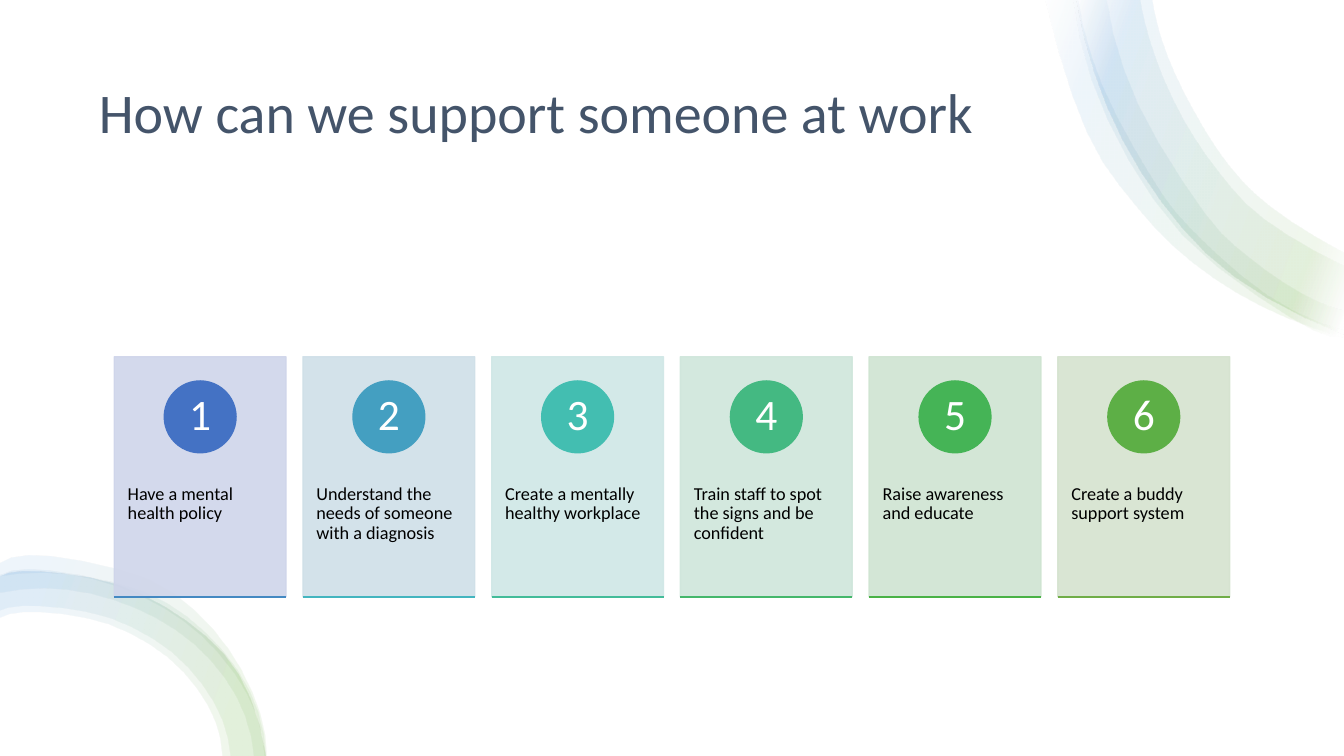
from lxml import etree
from pptx import Presentation
from pptx import util as u
from pptx.dml.color import RGBColor
from pptx.enum import shapes, text
from pptx.oxml import parse_xml
from pptx.oxml.ns import nsdecls, qn

COLORS = {
    "title": "44546A", "body": "000000", "number": "FFFFFF",
    "blue": "5B9BD5", "green": "70AD47", "white": "FFFFFF",
    "cards": ["CFD5EA", "CFDFE8", "CFE7E6", "CFE6DB", "CFE4D2", "D5E3CF"],
    "circles": ["4472C4", "449FC1", "43BEB1", "44B982", "45B456", "5DAF46"],
    "bars": ["4489C2", "43B5BF", "43BC99", "44B76B", "49B246", "70AD47"],
}
STEPS = [
    "Have a mental health policy",
    "Understand the needs of someone with a diagnosis",
    "Create a mentally healthy workplace",
    "Train staff to spot the signs and be confident",
    "Raise awareness and educate",
    "Create a buddy support system",
]

top_edge = [(27.13, 0), (27.91, 2.72), (29.26, 5.08), (31.08, 6.96), (33.87, 8.43)]
low_edge = [(0, 14.53), (1.02, 14.4), (2.96, 14.73), (4.7, 15.65), (6, 16.99), (6.68, 19.05)]
TOP_RIBBONS = [
    ([(26.34, 0), (27.38, 3.33), (28.65, 5.23), (30.02, 6.6), (31.78, 7.72), (33.87, 8.51)],
     [(33.87, 8.33), (31.93, 7.44), (30, 5.77), (28.96, 4.39), (27.76, 2.13), (27.17, 0)]),
    (top_edge,
     [(33.87, 6.38), (32.03, 5.23), (30.96, 4.17), (30.1, 2.84), (29.41, 1.4), (29.03, 0)]),
    ([(27.05, 0), (27.91, 3.02), (29.79, 5.92), (32.49, 7.98), (33.87, 8.46)],
     [(33.87, 7.82), (32.77, 7.37), (31.47, 6.48), (30.35, 5.36), (28.68, 2.64), (27.89, 0)]),
    (top_edge,
     [(33.87, 6.71), (31.83, 5.51), (30.73, 4.37), (29.82, 3.02), (29.13, 1.5), (28.73, 0)]),
]
LOW_RIBBONS = [
    (low_edge,
     [(5.59, 19.05), (5.23, 17.78), (4.22, 16.56), (2.72, 15.72), (1.02, 15.42), (0, 15.57)]),
    (low_edge,
     [(5.79, 19.05), (5.38, 17.7), (4.32, 16.43), (2.77, 15.57), (1.02, 15.27), (0, 15.39)]),
    ([(0, 14.5), (1.27, 14.38), (3.61, 14.91), (5.16, 15.93), (6.27, 17.4), (6.68, 19.05)],
     [(6.38, 19.05), (5.94, 17.55), (4.88, 16.23), (3.4, 15.32), (1.7, 14.86), (0, 14.94)]),
    ([(0, 14.2), (1.3, 14.02), (3.76, 14.61), (5.33, 15.82), (6.35, 17.45), (6.71, 19.05)],
     [(6.65, 19.05), (6.22, 17.5), (5.08, 16.03), (3.53, 15.01), (1.75, 14.48), (0, 14.53)]),
]
TOP_STOPS = [(2, "white"), (16, "green"), (85, "blue"), (100, "white")]
LOW_STOPS = [(16, "green"), (85, "blue")]


def smooth_curve(anchors, steps=3):
    before, after = [
        tuple(3 * p - 3 * q + r for p, q, r in zip(*ends))
        for ends in (anchors[:3], anchors[:-4:-1])]
    padded = [before, *anchors, after]
    curve = []
    for a, b, c, d in zip(padded, padded[1:], padded[2:], padded[3:]):
        for step in range(steps):
            t = step / steps
            curve.append(tuple(
                u.Cm(q + t * (r - p) / 2 + t * t * (2 * p - 5 * q + 4 * r - s) / 2
                     + t ** 3 * (3 * q - p - 3 * r + s) / 2)
                for p, q, r, s in zip(a, b, c, d)))
    return curve + [tuple(u.Cm(value) for value in anchors[-1])]


def write_text(shape, words, size, color, anchor, align, margins):
    frame = shape.text_frame
    frame.word_wrap = True
    frame.auto_size = text.MSO_AUTO_SIZE.NONE
    frame.vertical_anchor = anchor
    frame.margin_left = frame.margin_right = u.Cm(margins[0])
    frame.margin_top = frame.margin_bottom = u.Cm(margins[1])
    para = frame.paragraphs[0]
    para.text = words
    para.alignment = align
    para.line_spacing = 0.9
    para.font.name = "Calibri"
    para.font.size = u.Pt(size)
    para.font.color.rgb = RGBColor.from_string(color)


deck = Presentation()
deck.slide_width, deck.slide_height = u.Cm(33.87), u.Cm(19.05)
page = deck.slides.add_slide(deck.slide_layouts[6])

backdrop = page.shapes.add_shape(shapes.MSO_SHAPE.RECTANGLE, 0, 0,
                                 deck.slide_width, deck.slide_height)
backdrop.shadow.inherit = False
backdrop.fill.solid()
backdrop.fill.fore_color.rgb = RGBColor.from_string(COLORS["white"])
backdrop.line.fill.background()

for ribbons, color_stops in [(TOP_RIBBONS, TOP_STOPS), (LOW_RIBBONS, LOW_STOPS)]:
    stops = "".join(
        f'<a:gs pos="{position}000"><a:srgbClr val="{COLORS[name]}">'
        '<a:alpha val="10000"/></a:srgbClr></a:gs>'
        for position, name in color_stops)
    gradient = (f'<a:gradFill {nsdecls("a")} rotWithShape="1"><a:gsLst>{stops}</a:gsLst>'
                '<a:lin ang="12000000" scaled="0"/></a:gradFill>')
    for outer, inner in ribbons:
        outline = smooth_curve(outer) + smooth_curve(inner)
        builder = page.shapes.build_freeform(*outline[0])
        builder.add_line_segments(outline[1:], close=True)
        ribbon = builder.convert_to_shape()
        ribbon.shadow.inherit = False
        ribbon.line.fill.background()
        ribbon.fill.background()
        properties = ribbon._element.spPr
        properties.replace(properties.find(qn("a:noFill")), parse_xml(gradient))

title = page.shapes.add_textbox(u.Cm(2.24), u.Cm(1.27), u.Cm(29.39), u.Cm(3.3))
write_text(title, "How can we support someone at work", 40, COLORS["title"],
           text.MSO_ANCHOR.MIDDLE, text.PP_ALIGN.LEFT, (0.25, 0.13))

first_left, last_left = 2.88, 26.66
pitch = (last_left - first_left) / (len(STEPS) - 1)
card_width, card_top, card_height = 4.33, 8.99, 6.05
circle_size = 1.81
for index, step_text in enumerate(STEPS):
    left = first_left + index * pitch
    card = page.shapes.add_shape(shapes.MSO_SHAPE.RECTANGLE, u.Cm(left), u.Cm(card_top),
                                 u.Cm(card_width), u.Cm(card_height))
    circle = page.shapes.add_shape(
        shapes.MSO_SHAPE.OVAL, u.Cm(left + (card_width - circle_size) / 2), u.Cm(9.6),
        u.Cm(circle_size), u.Cm(circle_size))
    for shape, group in [(card, "cards"), (circle, "circles")]:
        color = RGBColor.from_string(COLORS[group][index])
        shape.shadow.inherit = False
        shape.fill.solid()
        shape.fill.fore_color.rgb = color
        shape.line.color.rgb = color
        shape.line.width = u.Pt(1)
    for tint in card._element.spPr.iter(qn("a:srgbClr")):
        etree.SubElement(tint, qn("a:alpha")).set("val", "90000")
    write_text(circle, str(index + 1), 31, COLORS["number"],
               text.MSO_ANCHOR.MIDDLE, text.PP_ALIGN.CENTER, (0.15, 0.03))

    label = page.shapes.add_textbox(u.Cm(left), u.Cm(11.3), u.Cm(card_width), u.Cm(3.63))
    write_text(label, step_text, 13, COLORS["body"],
               text.MSO_ANCHOR.TOP, text.PP_ALIGN.LEFT, (0.34, 0.91))

    base = u.Cm(card_top + card_height)
    bar = page.shapes.add_connector(shapes.MSO_CONNECTOR.STRAIGHT, u.Cm(left), base,
                                    u.Cm(left + card_width), base)
    bar.line.color.rgb = RGBColor.from_string(COLORS["bars"][index])
    bar.line.width = u.Pt(1.5)
    etree.SubElement(bar._element.spPr, qn("a:effectLst"))

deck.save("out.pptx")
